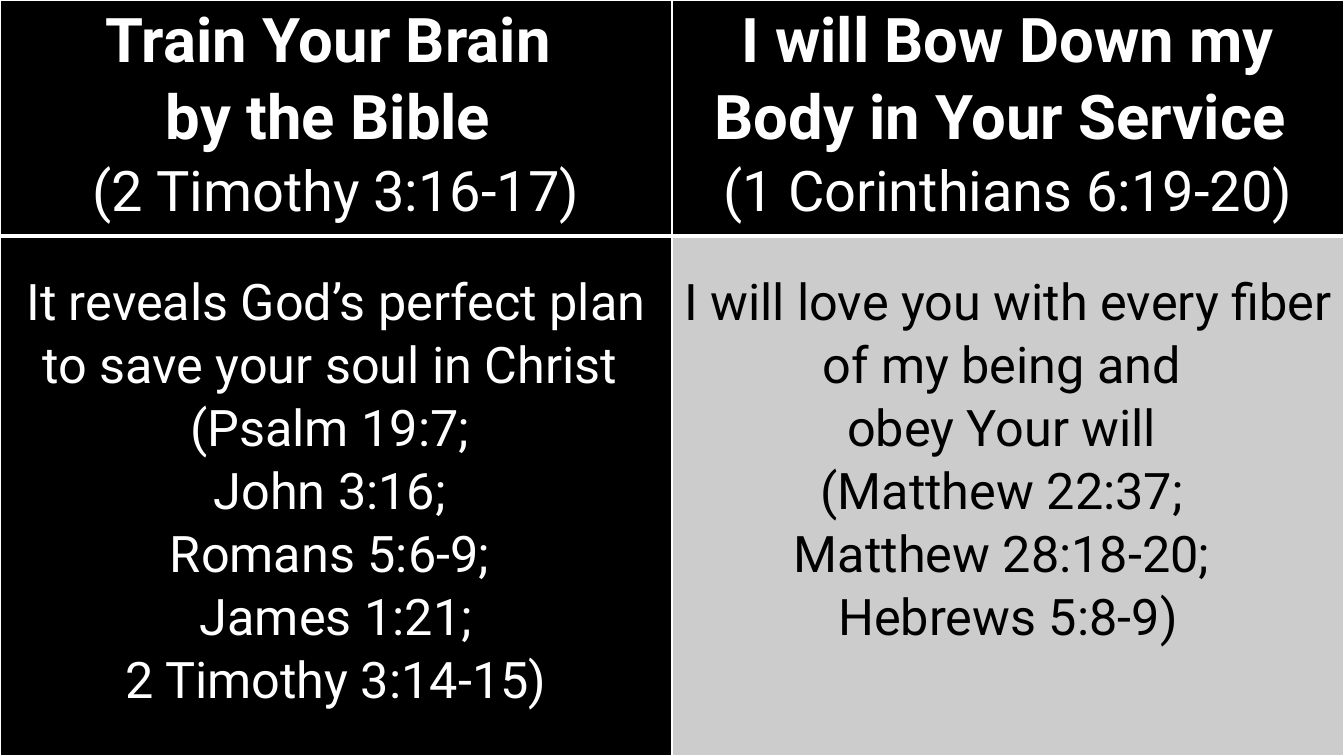
"""Build a two-column slide pairing two resolutions with their Bible references."""
from lxml.etree import SubElement
from pptx import Presentation
from pptx.dml.color import RGBColor
from pptx.enum.text import PP_ALIGN
from pptx.oxml.ns import qn
from pptx.util import Cm, Pt

COLORS = {"black": "000000", "white": "FFFFFF", "gray": "CCCCCC"}
HEADINGS = [
    (["Train Your Brain ", "by the Bible "], "(2 Timothy 3:16-17)"),
    (["I will Bow Down my Body in Your Service "], "(1 Corinthians 6:19-20)"),
]
BODIES = [
    ["It reveals God’s perfect plan to save your soul in Christ ", "(Psalm 19:7; ",
     "John 3:16; ", "Romans 5:6-9; ", "James 1:21;", "2 Timothy 3:14-15)"],
    ["I will love you with every fiber of my being and ", "obey Your will ",
     "(Matthew 22:37; ", "Matthew 28:18-20; ", "Hebrews 5:8-9)"],
]
BODY_STYLES = [("black", "white"), ("gray", "black")]


def style_cell(cell, fill, top, bottom_width):
    """Set the margins, borders and fill of a cell."""
    cell.margin_left = cell.margin_right = Cm(0.18)
    cell.margin_top, cell.margin_bottom = top, 0
    tcPr = cell._tc.get_or_add_tcPr()
    for side, width in (("L", 1), ("R", 1), ("T", 1), ("B", bottom_width)):
        ln = SubElement(tcPr, qn(f"a:ln{side}"), w=str(Pt(width)))
        SubElement(SubElement(ln, qn("a:solidFill")), qn("a:srgbClr"), val=COLORS["white"])
    cell.fill.solid()
    cell.fill.fore_color.rgb = RGBColor.from_string(COLORS[fill])


def write_lines(cell, lines, color):
    """Write one centred paragraph per (text, size, bold) line."""
    tf = cell.text_frame
    for i, (text, size, bold) in enumerate(lines):
        p = tf.add_paragraph() if i else tf.paragraphs[0]
        p.text = text
        p.alignment = PP_ALIGN.CENTER
        p.line_spacing = 1.07
        p.font.name = "Roboto"
        p.font.size = Pt(size)
        p.font.bold = bold
        p.font.color.rgb = RGBColor.from_string(COLORS[color])


prs = Presentation()
prs.slide_width, prs.slide_height = Cm(33.87), Cm(19.05)
s = prs.slides.add_slide(prs.slide_layouts[6])
s.background.fill.solid()
s.background.fill.fore_color.rgb = RGBColor.from_string(COLORS["black"])

table = s.shapes.add_table(2, 2, 0, 0, prs.slide_width, prs.slide_height).table
table.rows[0].height = Cm(5.94)
table.rows[1].height = prs.slide_height - table.rows[0].height

for col, (titles, reference) in enumerate(HEADINGS):
    cell = table.cell(0, col)
    style_cell(cell, "black", 0, 3)
    write_lines(cell, [(t, 44, True) for t in titles] + [(reference, 40, False)], "white")

for col, (lines, (fill, color)) in enumerate(zip(BODIES, BODY_STYLES)):
    cell = table.cell(1, col)
    style_cell(cell, fill, Cm(0.85), 1)
    write_lines(cell, [(t, 36, False) for t in lines], color)

prs.save("out.pptx")
